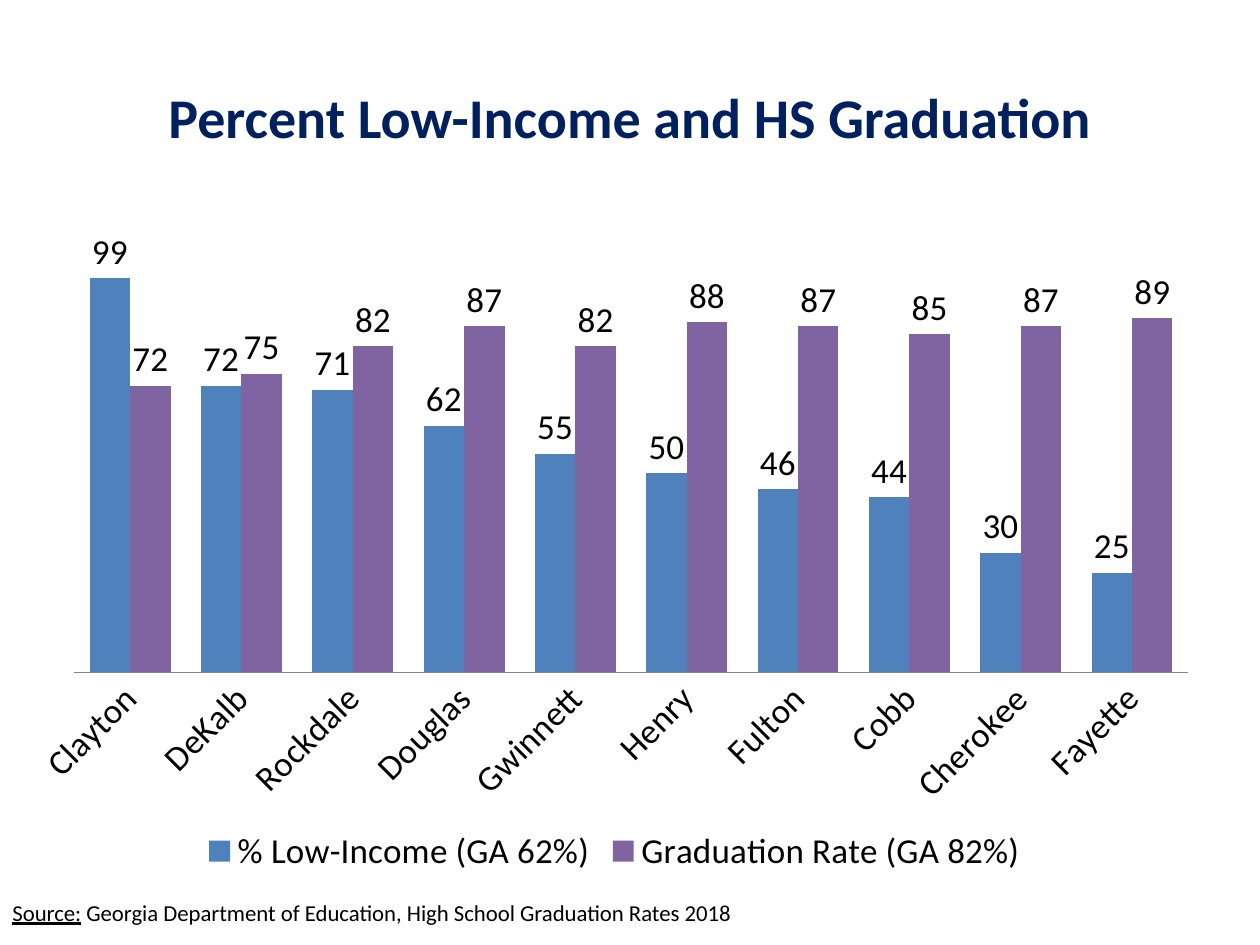
import pptx
import pptx.chart.data
import pptx.dml.color
import pptx.enum.chart
import pptx.enum.text
import pptx.oxml
import pptx.oxml.ns
import pptx.util
import lxml.etree

THEME = {
    "font": "Calibri",
    "title": "002060",
    "text": "000000",
    "axis": "868686",
    "low_income": "4F81BD",
    "graduation": "8064A2",
    "title_size": 32,
    "chart_size": 20,
    "source_size": 13,
}
EMU_PER_PX = 914400 / 126


def px(*lengths):
    return [pptx.util.Emu(round(length * EMU_PER_PX)) for length in lengths]


def style(font, size, color, bold=False):
    font.name = THEME["font"]
    font.size = pptx.util.Pt(THEME[size])
    font.color.rgb = pptx.dml.color.RGBColor.from_string(THEME[color])
    font.bold = bold


deck = pptx.Presentation()
deck.slide_width, deck.slide_height = px(1260, 945)
slide = deck.slides.add_slide(deck.slide_layouts[6])

title = slide.shapes.add_textbox(*px(63, 38, 1134, 157)).text_frame
title.word_wrap = True
title.vertical_anchor = pptx.enum.text.MSO_ANCHOR.MIDDLE
title.text = "Percent Low-Income and HS Graduation"
title.paragraphs[0].alignment = pptx.enum.text.PP_ALIGN.CENTER
style(title.paragraphs[0].runs[0].font, "title_size", "title", bold=True)

source = slide.shapes.add_textbox(*px(0, 902, 1103, 32)).text_frame
source.word_wrap = True
citation = source.paragraphs[0]
citation.line_spacing = 0.6
citation.space_before = pptx.util.Pt(6.5)
for wording, underlined in (
    ("Source:", True),
    (" Georgia Department of Education, High School Graduation Rates 2018", False),
):
    run = citation.add_run()
    run.text = wording
    style(run.font, "source_size", "text")
    run.font.underline = underlined

counties = pptx.chart.data.CategoryChartData(number_format="0")
counties.categories = [
    "Clayton", "DeKalb", "Rockdale", "Douglas", "Gwinnett",
    "Henry", "Fulton", "Cobb", "Cherokee", "Fayette",
]
counties.add_series("% Low-Income (GA 62%)", [99, 72, 71, 62, 55, 50, 46, 44, 30, 25])
counties.add_series("Graduation Rate (GA 82%)", [72, 75, 82, 87, 82, 88, 87, 85, 87, 89])
chart = slide.shapes.add_chart(
    pptx.enum.chart.XL_CHART_TYPE.COLUMN_CLUSTERED, *px(21, 195, 1187, 685), counties
).chart
chart.has_title = False
style(chart.font, "chart_size", "text")

chart.has_legend = True
chart.legend.position = pptx.enum.chart.XL_LEGEND_POSITION.BOTTOM
chart.legend.include_in_layout = False
style(chart.legend.font, "chart_size", "text")

county_axis = chart.category_axis
county_axis.major_tick_mark = pptx.enum.chart.XL_TICK_MARK.NONE
county_axis.format.line.color.rgb = pptx.dml.color.RGBColor.from_string(THEME["axis"])
style(county_axis.tick_labels.font, "chart_size", "text")
county_axis._element.find(".//" + pptx.oxml.ns.qn("a:bodyPr")).set("rot", "-2700000")

percent_axis = chart.value_axis
percent_axis.minimum_scale = 0
percent_axis.maximum_scale = 120
percent_axis.has_major_gridlines = False
percent_axis.visible = False

columns = chart.plots[0]
columns.gap_width = 75
columns.overlap = 0
columns.vary_by_categories = False
for series, color in zip(columns.series, ("low_income", "graduation")):
    series.format.fill.solid()
    series.format.fill.fore_color.rgb = pptx.dml.color.RGBColor.from_string(THEME[color])
    labels = series.data_labels
    labels.show_value = True
    labels.number_format = "0"
    labels.number_format_is_linked = False
    labels.position = pptx.enum.chart.XL_LABEL_POSITION.OUTSIDE_END
    style(labels.font, "chart_size", "text")

qn = pptx.oxml.ns.qn
plot_area = chart._chartSpace.find(".//" + qn("c:plotArea"))
for old_layout in plot_area.findall(qn("c:layout")):
    plot_area.remove(old_layout)
layout = pptx.oxml.parse_xml(f"<c:layout {pptx.oxml.ns.nsdecls('c')}><c:manualLayout/></c:layout>")
for tag, setting in (
    ("layoutTarget", "inner"), ("xMode", "edge"), ("yMode", "edge"),
    ("x", "0.045"), ("y", "0"), ("w", "0.938"), ("h", "0.697"),
):
    lxml.etree.SubElement(layout[0], qn(f"c:{tag}")).set("val", setting)
plot_area.insert(0, layout)

deck.save("out.pptx")
